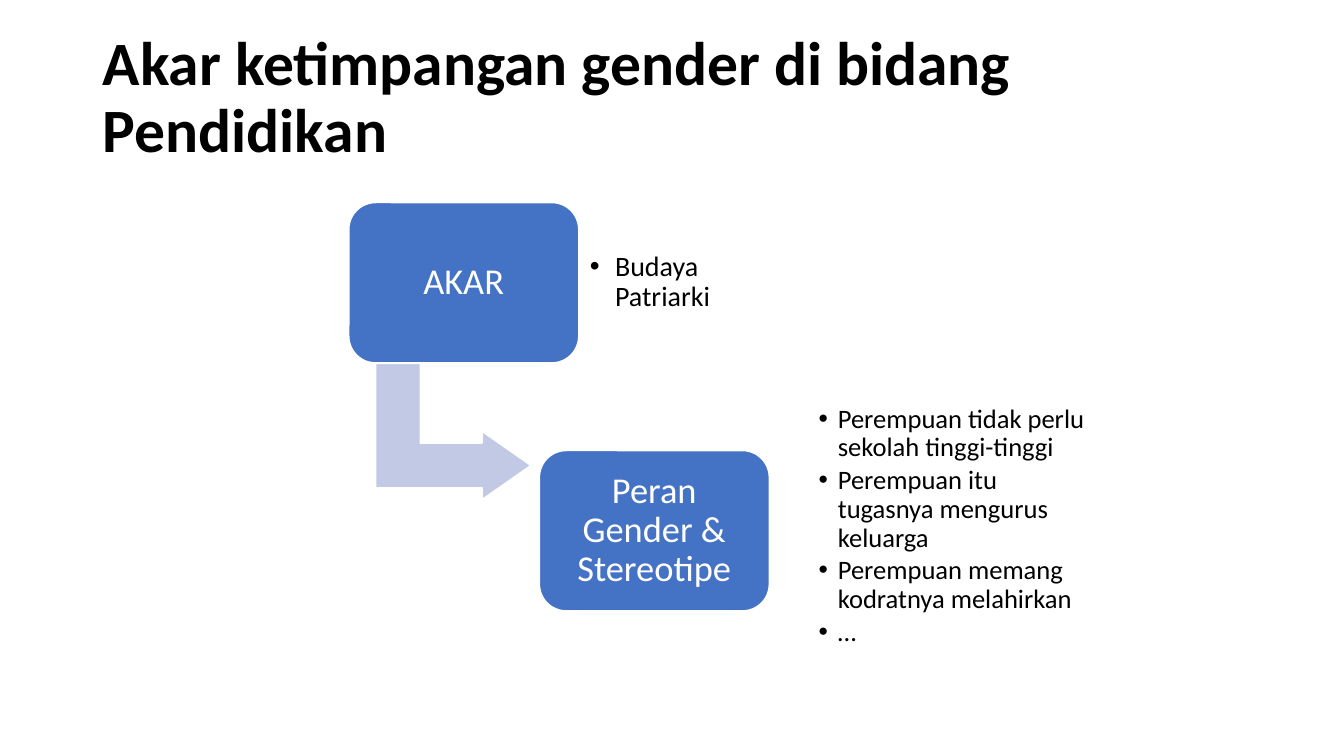
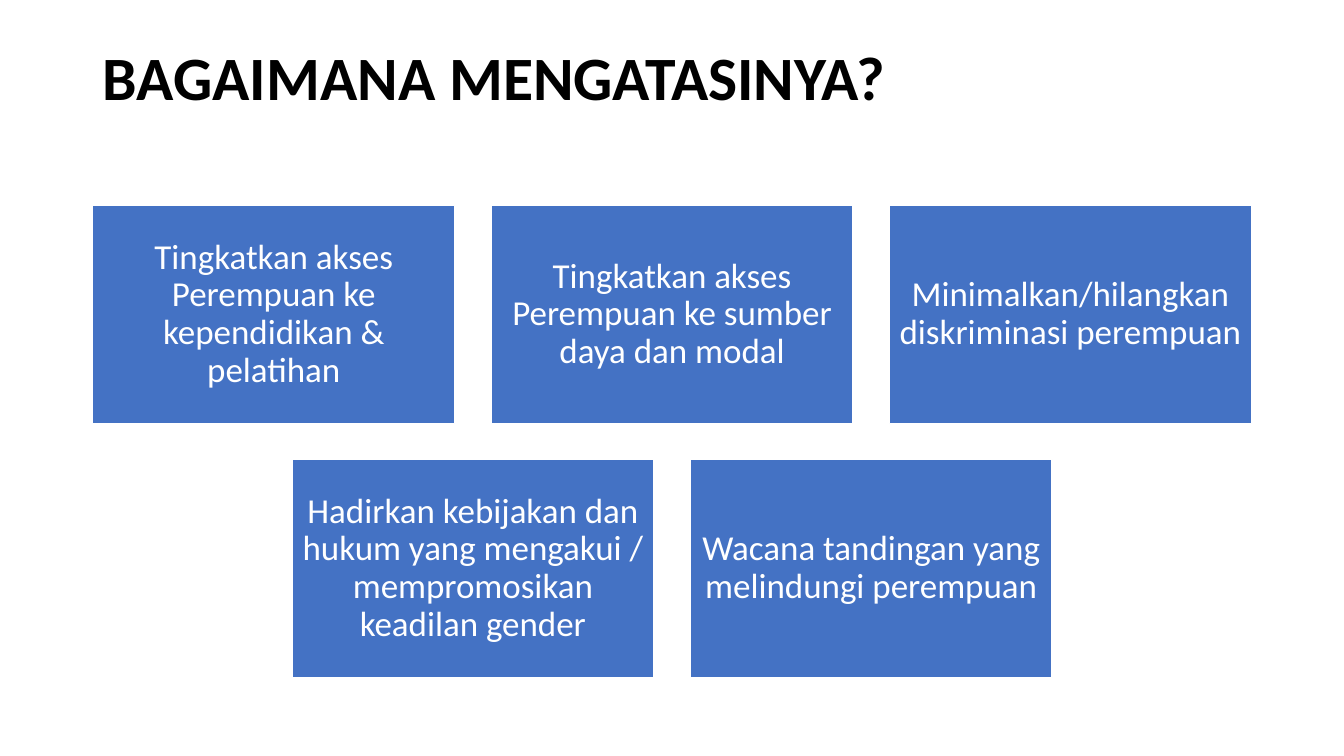
from dataclasses import dataclass

from lxml import etree
from pptx import Presentation
from pptx.dml.color import RGBColor
from pptx.enum.shapes import MSO_SHAPE
from pptx.enum.text import MSO_ANCHOR, MSO_AUTO_SIZE, PP_ALIGN
from pptx.oxml.ns import qn
from pptx.util import Inches, Pt

ROUNDED = MSO_SHAPE.ROUNDED_RECTANGLE
RECTANGLE = MSO_SHAPE.RECTANGLE
BENT_ARROW = MSO_SHAPE.BENT_UP_ARROW
LEFT, CENTER = PP_ALIGN.LEFT, PP_ALIGN.CENTER
MIDDLE = MSO_ANCHOR.MIDDLE
NO_AUTOFIT = MSO_AUTO_SIZE.NONE

FONT = "Calibri"
BLACK, WHITE = "000000", "FFFFFF"
BLUE, PALE_BLUE = "4472C4", "C1C9E4"

PAGE_WIDTH, PAGE_HEIGHT = 13.33, 7.5
TITLE_ONLY_LAYOUT, TWO_LISTS_LAYOUT = 5, 3


@dataclass(frozen=True)
class Box:
    left: float
    top: float
    width: float
    height: float

    def lengths(self) -> tuple:
        return tuple(Inches(value) for value in (self.left, self.top, self.width, self.height))


@dataclass(frozen=True)
class Step:
    label: str
    box: Box


@dataclass(frozen=True)
class BulletList:
    items: tuple[str, ...]
    box: Box
    size: float
    indent: float
    inset: float


STEPS = (
    Step("AKAR", Box(3.46, 2.01, 2.28, 1.59)),
    Step("Peran Gender & Stereotipe", Box(5.35, 4.47, 2.28, 1.59)),
)
STEP_ARROW = Box(3.82, 3.51, 1.35, 1.54)
STEP_LISTS = (
    BulletList(("Budaya Patriarki",), Box(5.74, 2.16, 1.66, 1.29), 20, 0.25, 0.11),
    BulletList(
        (
            "Perempuan tidak perlu sekolah tinggi-tinggi",
            "Perempuan itu tugasnya mengurus keluarga",
            "Perempuan memang kodratnya melahirkan",
            "…",
        ),
        Box(8.02, 3.75, 2.84, 2.94), 19, 0.19, 0.1,
    ),
)

SOLUTION_ROWS = (
    (
        "Tingkatkan akses Perempuan ke kependidikan & pelatihan",
        "Tingkatkan akses Perempuan ke sumber daya dan modal",
        "Minimalkan/hilangkan diskriminasi perempuan",
    ),
    (
        "Hadirkan kebijakan dan hukum yang mengakui / mempromosikan keadilan gender",
        "Wacana tandingan yang melindungi perempuan",
    ),
)
CARD_WIDTH, CARD_HEIGHT, CARD_GAP, CARDS_TOP = 3.59, 2.16, 0.36, 2.04


def color(value: str) -> RGBColor:
    return RGBColor.from_string(value)


def write(shape, *texts: str, size: float, ink: str = BLACK, bold: bool = False,
          align=LEFT, inset: float | None = None, indent: float = 0,
          space_after: float = 0) -> None:
    """Fill a shape with one paragraph per text; an indent makes them bullets."""
    frame = shape.text_frame
    frame.word_wrap = True
    frame.auto_size = NO_AUTOFIT
    frame.vertical_anchor = MIDDLE
    if inset is not None:
        frame.margin_left = frame.margin_right = Inches(inset)
        frame.margin_top = frame.margin_bottom = Inches(inset)
    for index, text in enumerate(texts):
        para = frame.add_paragraph() if index else frame.paragraphs[0]
        para.alignment = align
        para.line_spacing = 0.9
        para.space_before = Pt(0)
        para.space_after = Pt(space_after)
        if indent:
            set_bullet(para, indent)
        span = para.add_run()
        span.text = text
        span.font.name = FONT
        span.font.size = Pt(size)
        span.font.bold = bold
        span.font.color.rgb = color(ink)


def set_bullet(para, indent: float) -> None:
    properties = para._p.get_or_add_pPr()
    properties.set("marL", str(Inches(indent)))
    properties.set("indent", str(-Inches(indent)))
    etree.SubElement(properties, qn("a:buFont")).set("typeface", "Arial")
    etree.SubElement(properties, qn("a:buChar")).set("char", "•")


def place(shape, box: Box) -> None:
    shape.left, shape.top, shape.width, shape.height = box.lengths()


def add_page(deck, layout: int, title: str, title_height: float):
    page = deck.slides.add_slide(deck.slide_layouts[layout])
    place(page.shapes.title, Box(0.92, 0.4, 11.5, title_height))
    write(page.shapes.title, title, size=44, bold=True)
    return page


def add_panel(page, kind, box: Box, fill: str = BLUE):
    panel = page.shapes.add_shape(kind, *box.lengths())
    panel.shadow.inherit = False
    panel.fill.solid()
    panel.fill.fore_color.rgb = color(fill)
    panel.line.color.rgb = color(WHITE)
    panel.line.width = Pt(1)
    return panel


def set_adjustments(shape, *values: float) -> None:
    for index, value in enumerate(values):
        shape.adjustments[index] = value


def add_roots_page(deck) -> None:
    page = add_page(deck, TWO_LISTS_LAYOUT,
                    "Akar ketimpangan gender di bidang Pendidikan", 1.17)
    arrow = add_panel(page, BENT_ARROW, STEP_ARROW, PALE_BLUE)
    arrow.rotation = 90
    set_adjustments(arrow, 0.328, 0.25, 0.358)
    for step in STEPS:
        panel = add_panel(page, ROUNDED, step.box)
        set_adjustments(panel, 0.167)
        write(panel, step.label, size=26, ink=WHITE, align=CENTER, inset=0.11)
    bodies = list(page.placeholders)[1:]
    for body, bullets in zip(bodies, STEP_LISTS):
        place(body, bullets.box)
        write(body, *bullets.items, size=bullets.size, inset=bullets.inset,
              indent=bullets.indent, space_after=0.15 * bullets.size)


def add_solutions_page(deck) -> None:
    page = add_page(deck, TITLE_ONLY_LAYOUT, "BAGAIMANA MENGATASINYA?", 0.79)
    pitch = CARD_WIDTH + CARD_GAP
    for row, labels in enumerate(SOLUTION_ROWS):
        row_left = (PAGE_WIDTH - len(labels) * pitch + CARD_GAP) / 2
        top = CARDS_TOP + row * (CARD_HEIGHT + CARD_GAP)
        for column, label in enumerate(labels):
            box = Box(row_left + column * pitch, top, CARD_WIDTH, CARD_HEIGHT)
            card = add_panel(page, RECTANGLE, box)
            write(card, label, size=25, ink=WHITE, align=CENTER, inset=0.1)


def main() -> None:
    deck = Presentation()
    deck.slide_width = Inches(PAGE_WIDTH)
    deck.slide_height = Inches(PAGE_HEIGHT)
    add_roots_page(deck)
    add_solutions_page(deck)
    deck.save("out.pptx")


if __name__ == "__main__":
    main()
